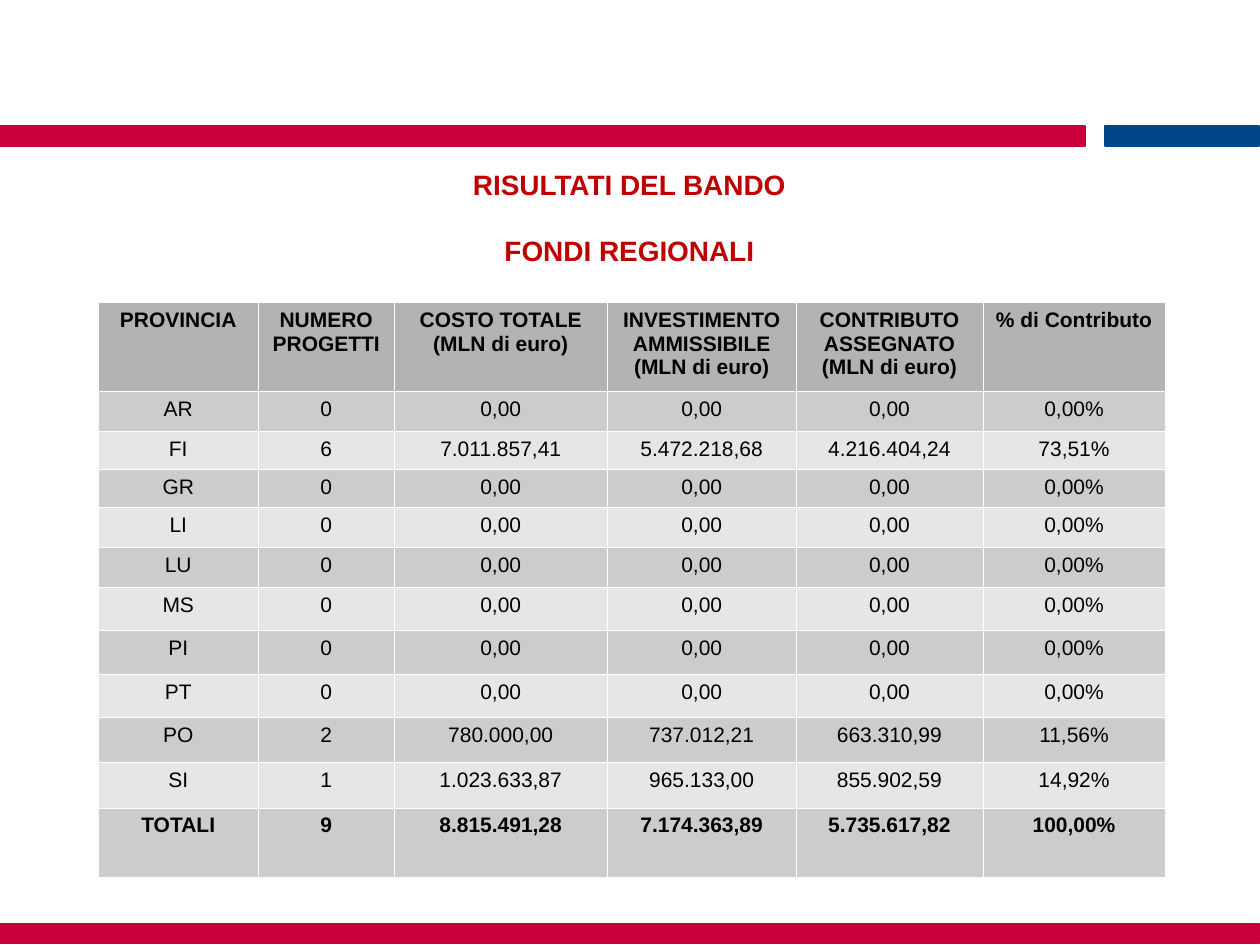
from dataclasses import dataclass

from lxml.etree import SubElement
from pptx import Presentation
from pptx.dml.color import RGBColor
from pptx.enum.shapes import MSO_SHAPE
from pptx.enum.text import PP_ALIGN
from pptx.oxml.ns import qn
from pptx.util import Inches, Pt


@dataclass(frozen=True)
class Theme:
    font: str = "Arial"
    title_size: int = 16
    table_size: int = 12
    red: str = "C90039"
    blue: str = "004589"
    title: str = "C00000"
    text: str = "000000"
    border: str = "FFFFFF"
    header: str = "B3B3B3"
    bands: tuple = ("CCCCCC", "E6E6E6")


HEADERS = [
    "PROVINCIA",
    "NUMERO PROGETTI",
    "COSTO TOTALE\n(MLN di euro)",
    "INVESTIMENTO AMMISSIBILE\n(MLN di euro)",
    "CONTRIBUTO ASSEGNATO\n(MLN di euro)",
    "% di Contributo",
]
PROVINCES = ["AR", "FI", "GR", "LI", "LU", "MS", "PI", "PT", "PO", "SI"]
NO_PROJECTS = ["0", "0,00", "0,00", "0,00", "0,00%"]
RESULTS = {
    "FI": ["6", "7.011.857,41", "5.472.218,68", "4.216.404,24", "73,51%"],
    "PO": ["2", "780.000,00", "737.012,21", "663.310,99", "11,56%"],
    "SI": ["1", "1.023.633,87", "965.133,00", "855.902,59", "14,92%"],
}
TOTALS = ["TOTALI", "9", "8.815.491,28", "7.174.363,89", "5.735.617,82", "100,00%"]
COLUMN_WIDTHS = [12.7, 10.8, 16.9, 15, 14.8, 14.5]
ROW_HEIGHTS = [7, 3.2, 3, 3, 3.2, 3.2, 3.4, 3.5, 3.4, 3.6, 3.6, 5.5]


class SlideBuilder:
    """Draws themed elements on a slide grid of 100 columns by 75 rows."""

    def __init__(self, presentation, theme):
        self.theme = theme
        self.column = presentation.slide_width / 100
        self.row = presentation.slide_height / 75
        self.slide = presentation.slides.add_slide(presentation.slide_layouts[6])

    def place(self, left, top, width, height):
        return (int(left * self.column), int(top * self.row),
                int(width * self.column), int(height * self.row))

    def format_text(self, text_frame, size, color, bold):
        for paragraph in text_frame.paragraphs:
            paragraph.alignment = PP_ALIGN.CENTER
            for run in paragraph.runs:
                run.font.name = self.theme.font
                run.font.size = Pt(size)
                run.font.bold = bold
                run.font.color.rgb = RGBColor.from_string(color)

    def bar(self, left, width, top, color):
        shape = self.slide.shapes.add_shape(
            MSO_SHAPE.RECTANGLE, *self.place(left, top, width, 1.6))
        shape.shadow.inherit = False
        shape.fill.solid()
        shape.fill.fore_color.rgb = RGBColor.from_string(color)
        shape.line.color.rgb = RGBColor.from_string(color)
        shape.line.width = Pt(1)

    def title(self, text, left, top, width, height):
        text_frame = self.slide.shapes.add_textbox(
            *self.place(left, top, width, height)).text_frame
        text_frame.word_wrap = True
        text_frame.text = text
        self.format_text(text_frame, self.theme.title_size, self.theme.title, True)
        for paragraph in text_frame.paragraphs[1:]:
            paragraph.space_before = Pt(18.4)

    def cell(self, cell, text, fill, bold):
        cell.text_frame.text = text
        self.format_text(cell.text_frame, self.theme.table_size, self.theme.text, bold)
        properties = cell._tc.get_or_add_tcPr()
        for side in ("a:lnL", "a:lnR", "a:lnT", "a:lnB"):
            line = SubElement(properties, qn(side), w=str(Pt(0.06)))
            SubElement(SubElement(line, qn("a:solidFill")), qn("a:srgbClr"),
                       val=self.theme.border)
        cell.fill.solid()
        cell.fill.fore_color.rgb = RGBColor.from_string(fill)

    def table(self, rows, left, top, widths, heights):
        table = self.slide.shapes.add_table(
            len(rows), len(widths),
            *self.place(left, top, sum(widths), sum(heights))).table
        for column, width in zip(table.columns, widths):
            column.width = int(width * self.column)
        for row, height in zip(table.rows, heights):
            row.height = int(height * self.row)
        for index, values in enumerate(rows):
            fill = self.theme.bands[(index - 1) % 2] if index else self.theme.header
            bold = index in (0, len(rows) - 1)
            for cell, value in zip(table.rows[index].cells, values):
                self.cell(cell, value, fill, bold)


def main():
    presentation = Presentation()
    presentation.slide_width = Inches(10)
    presentation.slide_height = Inches(7.5)
    theme = Theme()
    builder = SlideBuilder(presentation, theme)
    builder.bar(0, 86.1, 10, theme.red)
    builder.bar(0, 99.9, 73.3, theme.red)
    builder.bar(87.7, 12.2, 10, theme.blue)
    builder.title("RISULTATI DEL BANDO\nFONDI REGIONALI", 3.5, 12.8, 92.9, 9)
    results = [[province, *RESULTS.get(province, NO_PROJECTS)] for province in PROVINCES]
    builder.table([HEADERS, *results, TOTALS], 7.8, 24, COLUMN_WIDTHS, ROW_HEIGHTS)
    presentation.save("out.pptx")


if __name__ == "__main__":
    main()
